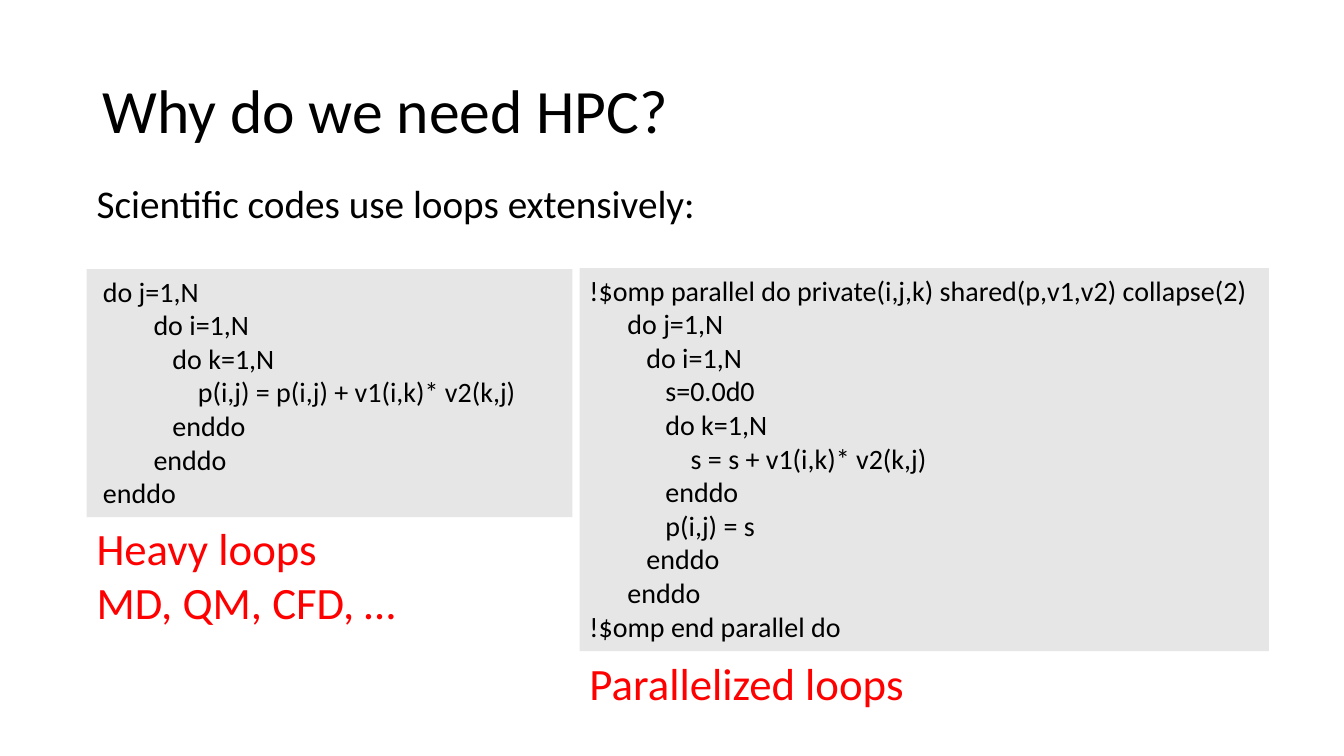
from dataclasses import dataclass
from typing import Optional

from pptx import Presentation
from pptx.dml.color import RGBColor
from pptx.enum.shapes import MSO_SHAPE as Shape
from pptx.enum.text import MSO_ANCHOR as Anchor, PP_ALIGN as Align
from pptx.util import Pt

BLACK = RGBColor(0x00, 0x00, 0x00)
RED = RGBColor(0xFF, 0x00, 0x00)
GREY = RGBColor(0xE7, 0xE6, 0xE6)

# Shared column edges, in points
LEFT_COLUMN = 61.9
RIGHT_COLUMN = 414

SERIAL_CODE = """\
 do j=1,N
         do i=1,N
            do k=1,N
                p(i,j) = p(i,j) + v1(i,k)* v2(k,j)
            enddo
         enddo
 enddo"""

PARALLEL_CODE = """\
!$omp parallel do private(i,j,k) shared(p,v1,v2) collapse(2)
      do j=1,N
         do i=1,N
            s=0.0d0
            do k=1,N
                s = s + v1(i,k)* v2(k,j)
            enddo
            p(i,j) = s
         enddo
      enddo
!$omp end parallel do"""


@dataclass
class TextBlock:
    text: str
    left: float
    top: float
    width: float
    height: float
    size: float
    color: RGBColor = BLACK
    fill: Optional[RGBColor] = None
    anchor: Anchor = Anchor.TOP
    line_spacing: float = 1.0


BLOCKS = [
    # Title and introduction
    TextBlock("Why do we need HPC?", 66, 28.75, 828, 104.4, 44,
              anchor=Anchor.MIDDLE, line_spacing=0.9),
    TextBlock("Scientific codes use loops extensively:",
              LEFT_COLUMN, 124.6, 658, 41.2, 28),
    # Code panels
    TextBlock(SERIAL_CODE, LEFT_COLUMN, 192.2, 347, 177.2, 20, fill=GREY),
    TextBlock(PARALLEL_CODE, RIGHT_COLUMN, 191.5, 492.5, 273.6, 20, fill=GREY),
    # Captions under the panels
    TextBlock("Heavy loops\nMD, QM, CFD, …",
              LEFT_COLUMN, 368.6, 254.2, 85, 32, RED),
    TextBlock("Parallelized loops", RIGHT_COLUMN, 465.1, 254.2, 46, 32, RED),
]


def draw_block(slide, block: TextBlock) -> None:
    """Draw a text box, or a filled rectangle when the block has a fill."""
    bounds = [Pt(length) for length in
              (block.left, block.top, block.width, block.height)]
    if block.fill is None:
        shape = slide.shapes.add_textbox(*bounds)
    else:
        shape = slide.shapes.add_shape(Shape.RECTANGLE, *bounds)
        shape.shadow.inherit = False
        shape.fill.solid()
        shape.fill.fore_color.rgb = block.fill
        shape.line.fill.background()

    frame = shape.text_frame
    frame.text = block.text
    frame.word_wrap = True
    frame.vertical_anchor = block.anchor

    font_format = {"name": "Calibri", "size": Pt(block.size)}
    for paragraph in frame.paragraphs:
        paragraph.alignment = Align.LEFT
        paragraph.line_spacing = block.line_spacing
        for run in paragraph.runs:
            for attribute, value in font_format.items():
                setattr(run.font, attribute, value)
            run.font.color.rgb = block.color


def main() -> None:
    presentation = Presentation()
    presentation.slide_width = Pt(960)
    presentation.slide_height = Pt(540)
    slide = presentation.slides.add_slide(presentation.slide_layouts[6])
    for block in BLOCKS:
        draw_block(slide, block)
    presentation.save("out.pptx")


if __name__ == "__main__":
    main()
